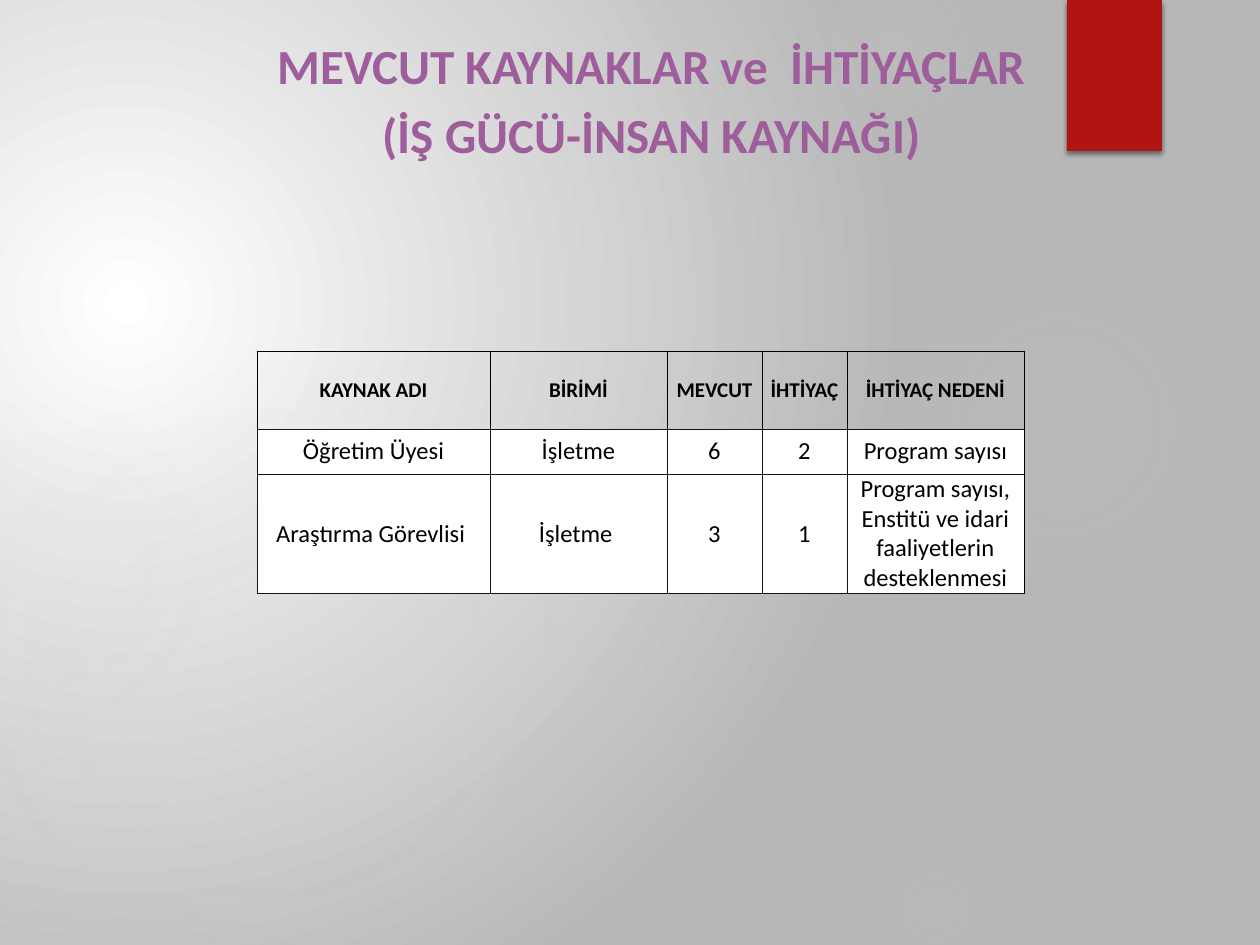
from lxml.etree import SubElement
from pptx import Presentation
from pptx.dml.color import RGBColor
from pptx.enum.shapes import MSO_SHAPE
from pptx.enum.text import MSO_ANCHOR, MSO_AUTO_SIZE, PP_ALIGN
from pptx.oxml import parse_xml
from pptx.oxml.ns import nsdecls, qn
from pptx.util import Emu, Pt

PX = 914400 // 126
WHITE = RGBColor(0xFF, 0xFF, 0xFF)
BLACK = RGBColor(0x00, 0x00, 0x00)
GREY = RGBColor(0xB7, 0xB7, 0xB7)
GLOW = RGBColor(0xD9, 0xD9, 0xD9)
RED = RGBColor(0xB0, 0x15, 0x13)
PURPLE = RGBColor(0x9E, 0x5E, 0x9B)
CHARCOAL = RGBColor(0x14, 0x13, 0x12)

GLOWS = [
    ((868, 231, 388), [(0, 7), (36, 6), (69, 0)]),
    ((784, -63, 220), [(0, 14), (36, 7), (73, 0)]),
    ((868, 840, 136), [(0, 9), (36, 5), (66, 0)]),
    ((-21, 368, 577), [(0, 11), (36, 10), (75, 0)]),
    ((-116, 399, 325), [(0, 8), (36, 8), (72, 0)]),
]
HEADING = ["MEVCUT KAYNAKLAR ve  İHTİYAÇLAR", "(İŞ GÜCÜ-İNSAN KAYNAĞI)"]
RESOURCES = [
    ["KAYNAK ADI", "BİRİMİ", "MEVCUT", "İHTİYAÇ", "İHTİYAÇ NEDENİ"],
    ["Öğretim Üyesi", "İşletme", "6", "2", "Program sayısı"],
    ["Araştırma Görevlisi ", "İşletme ", "3", "1",
     "Program sayısı, Enstitü ve idari faaliyetlerin desteklenmesi"],
]
COLUMN_WIDTHS = [233, 177, 95, 85, 177]
ROW_HEIGHTS = [78, 45, 119]


def px(*lengths):
    """Turn pixel lengths into EMU."""
    return [Emu(length * PX) for length in lengths]


def write(frame, lines, size, color=BLACK, bold=False, after=0):
    """Write centred Calibri paragraphs into a text frame."""
    frame.word_wrap = True
    for index, line in enumerate(lines):
        paragraph = frame.add_paragraph() if index else frame.paragraphs[0]
        paragraph.alignment = PP_ALIGN.CENTER
        paragraph.space_before, paragraph.space_after = Pt(0), Pt(after)
        run = paragraph.add_run()
        run.text = line
        run.font.name, run.font.size, run.font.bold = "Calibri", Pt(size), bold
        run.font.color.rgb = color


def radial_fill(fill, owner, stops, focus):
    """Give the owner a circular gradient of (position, colour, opacity) stops."""
    fill.gradient()
    linear = owner.element.xpath(".//a:gradFill")[0]
    stop_list = "".join(
        f'<a:gs pos="{position * 1000}"><a:srgbClr val="{color}">'
        f'<a:alpha val="{opacity * 1000}"/></a:srgbClr></a:gs>'
        for position, color, opacity in stops)
    left, top, right, bottom = (edge * 1000 for edge in focus)
    radial = parse_xml(
        f'<a:gradFill {nsdecls("a")} rotWithShape="1"><a:gsLst>{stop_list}</a:gsLst>'
        f'<a:path path="circle"><a:fillToRect l="{left}" t="{top}" r="{right}" '
        f'b="{bottom}"/></a:path></a:gradFill>')
    linear.getparent().replace(linear, radial)


def add_plain_shape(slide, preset, box):
    """Add a preset shape without line or shadow."""
    shape = slide.shapes.add_shape(preset, *px(*box))
    shape.shadow.inherit = False
    shape.line.fill.background()
    return shape


def add_backdrop(slide):
    """Fill the background and scatter the soft glows over it."""
    radial_fill(slide.background.fill, slide,
                [(0, WHITE, 100), (100, GREY, 100)], (45, 65, 125, 100))
    for (left, top, diameter), fades in GLOWS:
        glow = add_plain_shape(slide, MSO_SHAPE.OVAL, (left, top, diameter, diameter))
        radial_fill(glow.fill, glow,
                    [(position, GLOW, opacity) for position, opacity in fades],
                    (50, 50, 50, 50))


def add_ribbon(slide, box):
    """Hang the red ribbon with its soft shadow from the top edge."""
    ribbon = add_plain_shape(slide, MSO_SHAPE.RECTANGLE, box)
    ribbon.fill.solid()
    ribbon.fill.fore_color.rgb = RED
    effects = ribbon.element.xpath(".//a:effectLst")[0]
    shadow = SubElement(effects, qn("a:outerShdw"), blurRad=str(Pt(3)),
                        dist=str(Pt(2)), dir="5400000", rotWithShape="0")
    shade = SubElement(shadow, qn("a:srgbClr"), val=str(BLACK))
    SubElement(shade, qn("a:alpha"), val="45000")


def add_heading(slide, box):
    """Place the two-line heading in the title placeholder, in front."""
    heading = slide.shapes.title
    heading.left, heading.top, heading.width, heading.height = px(*box)
    slide.shapes.element.append(heading.element)
    frame = heading.text_frame
    frame.auto_size = MSO_AUTO_SIZE.NONE
    frame.vertical_anchor = MSO_ANCHOR.BOTTOM
    write(frame, HEADING, 28, color=PURPLE, bold=True, after=6)


def set_borders(cell, colors):
    """Draw half-point borders on the left, right, top and bottom of a cell."""
    properties = cell._tc.get_or_add_tcPr()
    for index, (side, color) in enumerate(zip("LRTB", colors)):
        properties.insert(index, parse_xml(
            f'<a:ln{side} {nsdecls("a")} w="{Pt(0.5)}"><a:solidFill>'
            f'<a:srgbClr val="{color}"/></a:solidFill></a:ln{side}>'))


def add_resource_table(slide, left, top):
    """Build the table of staff at hand and staff needed."""
    box = px(left, top, sum(COLUMN_WIDTHS), sum(ROW_HEIGHTS))
    table = slide.shapes.add_table(len(ROW_HEIGHTS), len(COLUMN_WIDTHS), *box).table
    table.first_row = table.horz_banding = False
    for column, width in zip(table.columns, px(*COLUMN_WIDTHS)):
        column.width = width
    for row, height, entries in zip(table.rows, px(*ROW_HEIGHTS), RESOURCES):
        row.height = height
        header = entries is RESOURCES[0]
        for cell, entry in zip(row.cells, entries):
            cell.margin_left = cell.margin_right = 0
            cell.margin_top = cell.margin_bottom = 0
            cell.vertical_anchor = MSO_ANCHOR.MIDDLE
            write(cell.text_frame, [entry], 12 if header else 14, bold=header)
            if header:
                cell.fill.background()
            else:
                cell.fill.solid()
                cell.fill.fore_color.rgb = WHITE
            set_borders(cell, (BLACK if header else CHARCOAL, BLACK,
                               BLACK if header else CHARCOAL, CHARCOAL))


def main():
    """Build and save the slide."""
    presentation = Presentation()
    presentation.slide_width, presentation.slide_height = px(1260, 945)
    slide = presentation.slides.add_slide(presentation.slide_layouts[5])
    add_backdrop(slide)
    add_ribbon(slide, (1067, 0, 95, 151))
    add_heading(slide, (247, 21, 809, 149))
    add_resource_table(slide, 257, 351)
    presentation.save("out.pptx")


if __name__ == "__main__":
    main()
